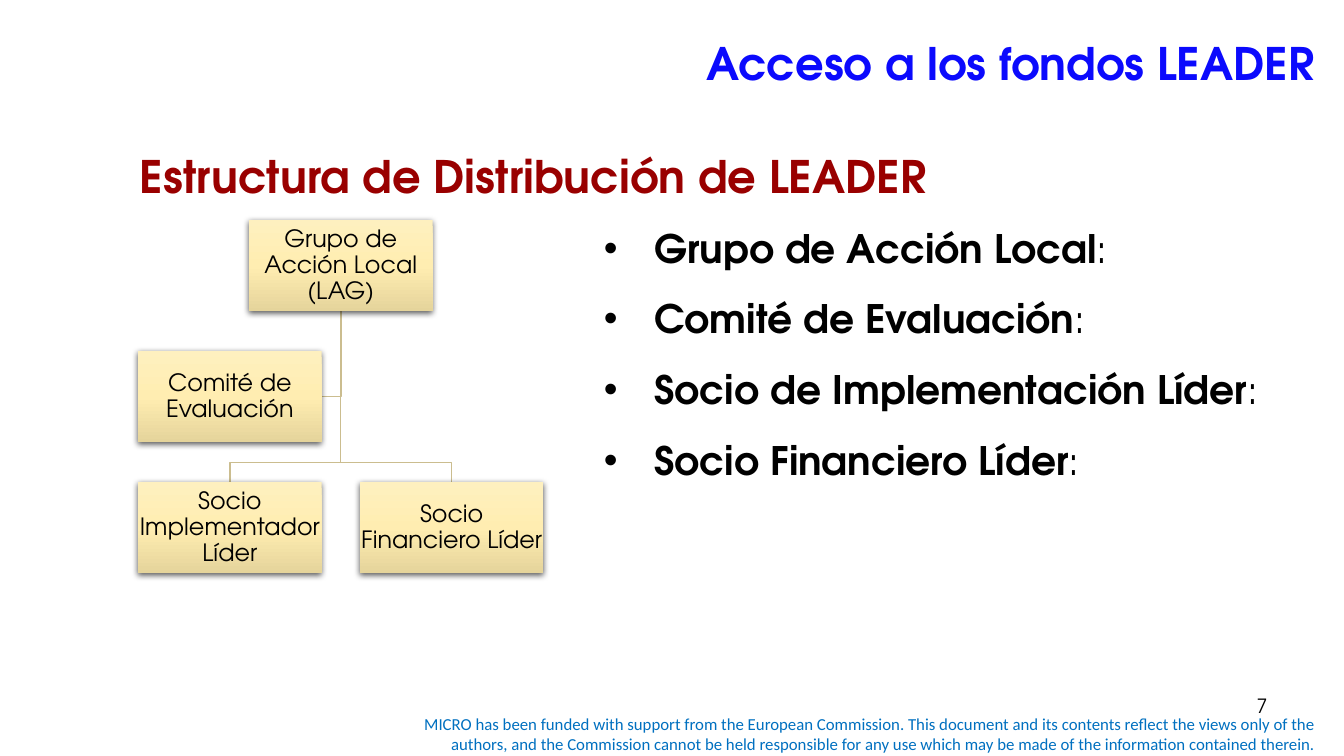
from dataclasses import dataclass

from lxml import etree
from pptx import Presentation
from pptx.dml.color import RGBColor
from pptx.enum.shapes import MSO_SHAPE as Preset
from pptx.enum.text import MSO_ANCHOR as Anchor, MSO_AUTO_SIZE as AutoSize, PP_ALIGN as Align
from pptx.oxml.ns import qn
from pptx.util import Inches, Pt

UNIT = Inches(0.1)  # one grid column or row


@dataclass(frozen=True)
class Theme:
    font: str = "TeX Gyre Adventor"
    footer_font: str = "Calibri"
    title: str = "0B0AFD"
    heading: str = "990000"
    text: str = "000000"
    footer: str = "0070C0"
    link: str = "CBBD8F"
    box_stops: tuple = ((0, "FEF0BF"), (50, "FFEDB1"), (100, "E5D49B"))
    heading_size: int = 32
    list_size: int = 28
    box_size: int = 17
    number_size: int = 14
    footer_size: int = 12


THEME = Theme()


@dataclass(frozen=True)
class Area:
    column: float
    row: float
    columns: float
    rows: float

    def emu(self) -> tuple:
        return tuple(int(n * UNIT) for n in (self.column, self.row, self.columns, self.rows))


@dataclass(frozen=True)
class OrgBox:
    text: str
    step: int
    level: int

    @property
    def area(self) -> Area:
        return Area(13.7 + 11 * self.step, 21.8 + 13 * self.level, 18.2, 9.1)

    @property
    def centre(self) -> float:
        return self.area.column + self.area.columns / 2


@dataclass(frozen=True)
class TextLine:
    text: str
    area: Area
    size: int
    color: str
    font: str = THEME.font
    bold: bool = False
    align: Align = Align.RIGHT
    anchor: Anchor = Anchor.TOP
    wrap: bool = True


GROUP = OrgBox("Grupo de Acción Local (LAG)", 1, 0)
COMMITTEE = OrgBox("Comité de Evaluación", 0, 1)
PARTNERS = (OrgBox("Socio Implementador Líder", 0, 2), OrgBox("Socio Financiero Líder", 2, 2))

TITLE = TextLine("Acceso a los fondos LEADER", Area(11.4, 0, 120, 12.5), THEME.heading_size,
                 THEME.title, bold=True, anchor=Anchor.MIDDLE)
TEXT_LINES = (
    TextLine("MICRO has been funded with support from the European Commission. This document and "
             "its contents reflect the views only of the authors, and the Commission cannot be held "
             "responsible for any use which may be made of the information contained therein.",
             Area(37.5, 70.3, 94, 5), THEME.footer_size, THEME.footer, THEME.footer_font,
             anchor=Anchor.MIDDLE),
    TextLine("7", Area(95.6, 68.3, 31.1, 5.2), THEME.number_size, THEME.text),
    TextLine("Estructura de Distribución de LEADER", Area(12.9, 14.3, 83.3, 6.4),
             THEME.heading_size, THEME.heading, bold=True, align=Align.LEFT, wrap=False),
)
LIST_AREA = Area(58.9, 19.4, 67.8, 29.3)
ROLES = ("Grupo de Acción Local", "Comité de Evaluación",
         "Socio de Implementación Líder", "Socio Financiero Líder")


def place(shape, area: Area) -> None:
    shape.left, shape.top, shape.width, shape.height = area.emu()


def set_font(paragraph, name: str, size: int, color: str) -> None:
    paragraph.font.name = name
    paragraph.font.size = Pt(size)
    paragraph.font.color.rgb = RGBColor.from_string(color)


def write_line(shape, line: TextLine) -> None:
    frame = shape.text_frame
    frame.auto_size = AutoSize.NONE
    frame.word_wrap = line.wrap
    frame.vertical_anchor = line.anchor
    frame.text = line.text
    paragraph = frame.paragraphs[0]
    paragraph.alignment = line.align
    set_font(paragraph, line.font, line.size, line.color)
    paragraph.font.bold = line.bold


def write_roles(body) -> None:
    place(body, LIST_AREA)
    frame = body.text_frame
    frame.auto_size = AutoSize.NONE
    for index, role in enumerate(ROLES):
        paragraph = frame.add_paragraph() if index else frame.paragraphs[0]
        paragraph.line_spacing = 1.5
        paragraph.space_before = Pt(0)
        properties = paragraph._p.get_or_add_pPr()
        properties.set("marL", str(Inches(0.5)))
        properties.set("indent", str(-Inches(0.5)))
        etree.SubElement(properties, qn("a:buFont")).set("typeface", "Arial")
        etree.SubElement(properties, qn("a:buChar")).set("char", "•")
        set_font(paragraph, THEME.font, THEME.list_size, THEME.text)
        for text, bold in ((role, True), (":", False)):
            run = paragraph.add_run()
            run.text = text
            run.font.bold = bold


def add_color(parent, color: str):
    element = etree.SubElement(parent, qn("a:srgbClr"))
    element.set("val", color)
    return element


def add_box_effects(shape) -> None:
    """Give the box its three-stop gradient and soft lower shadow."""
    shape.fill.gradient()
    shape.fill.gradient_angle = 270
    properties = shape.element.spPr
    stops = properties.find(".//" + qn("a:gsLst"))
    for stop in list(stops):
        stops.remove(stop)
    for position, color in THEME.box_stops:
        stop = etree.SubElement(stops, qn("a:gs"))
        stop.set("pos", str(position * 1000))
        add_color(stop, color)
    shape.shadow.inherit = False
    shadow = etree.SubElement(properties.find(qn("a:effectLst")), qn("a:outerShdw"))
    for key, value in (("blurRad", Pt(4.5)), ("dist", Pt(1.5)), ("dir", 90 * 60000),
                       ("algn", "ctr"), ("rotWithShape", 0)):
        shadow.set(key, str(value))
    etree.SubElement(add_color(shadow, THEME.text), qn("a:alpha")).set("val", "63000")


def add_org_box(slide, box: OrgBox) -> None:
    shape = slide.shapes.add_shape(Preset.RECTANGLE, *box.area.emu())
    shape.line.fill.background()
    add_box_effects(shape)
    frame = shape.text_frame
    frame.margin_left = frame.margin_right = frame.margin_top = frame.margin_bottom = Inches(0.01)
    write_line(shape, TextLine(box.text, box.area, THEME.box_size, THEME.text,
                               align=Align.CENTER, anchor=Anchor.MIDDLE))
    frame.paragraphs[0].line_spacing = 0.9
    frame.paragraphs[0].space_after = Pt(6)


def add_link(slide, *points: tuple) -> None:
    start, *rest = [(int(x * UNIT), int(y * UNIT)) for x, y in points]
    builder = slide.shapes.build_freeform(*start)
    builder.add_line_segments(rest, close=False)
    shape = builder.convert_to_shape()
    shape.fill.background()
    shape.line.color.rgb = RGBColor.from_string(THEME.link)
    shape.line.width = Pt(1)
    shape.shadow.inherit = False


def add_org_chart(slide) -> None:
    trunk, bottom = GROUP.centre, GROUP.area.row + GROUP.area.rows
    side = COMMITTEE.area
    middle = side.row + side.rows / 2
    add_link(slide, (trunk, bottom), (trunk, middle), (side.column + side.columns, middle))
    for partner in PARTNERS:
        top = partner.area.row
        branch = top - 1.9
        add_link(slide, (trunk, bottom), (trunk, branch), (partner.centre, branch),
                 (partner.centre, top))
    for box in (GROUP, *PARTNERS, COMMITTEE):
        add_org_box(slide, box)


def main() -> None:
    presentation = Presentation()
    presentation.slide_width, presentation.slide_height = Inches(13.33), Inches(7.5)
    slide = presentation.slides.add_slide(presentation.slide_layouts[1])
    place(slide.shapes.title, TITLE.area)
    write_line(slide.shapes.title, TITLE)
    write_roles(slide.placeholders[1])
    add_org_chart(slide)
    for line in TEXT_LINES:
        write_line(slide.shapes.add_textbox(*line.area.emu()), line)
    presentation.save("out.pptx")


if __name__ == "__main__":
    main()
